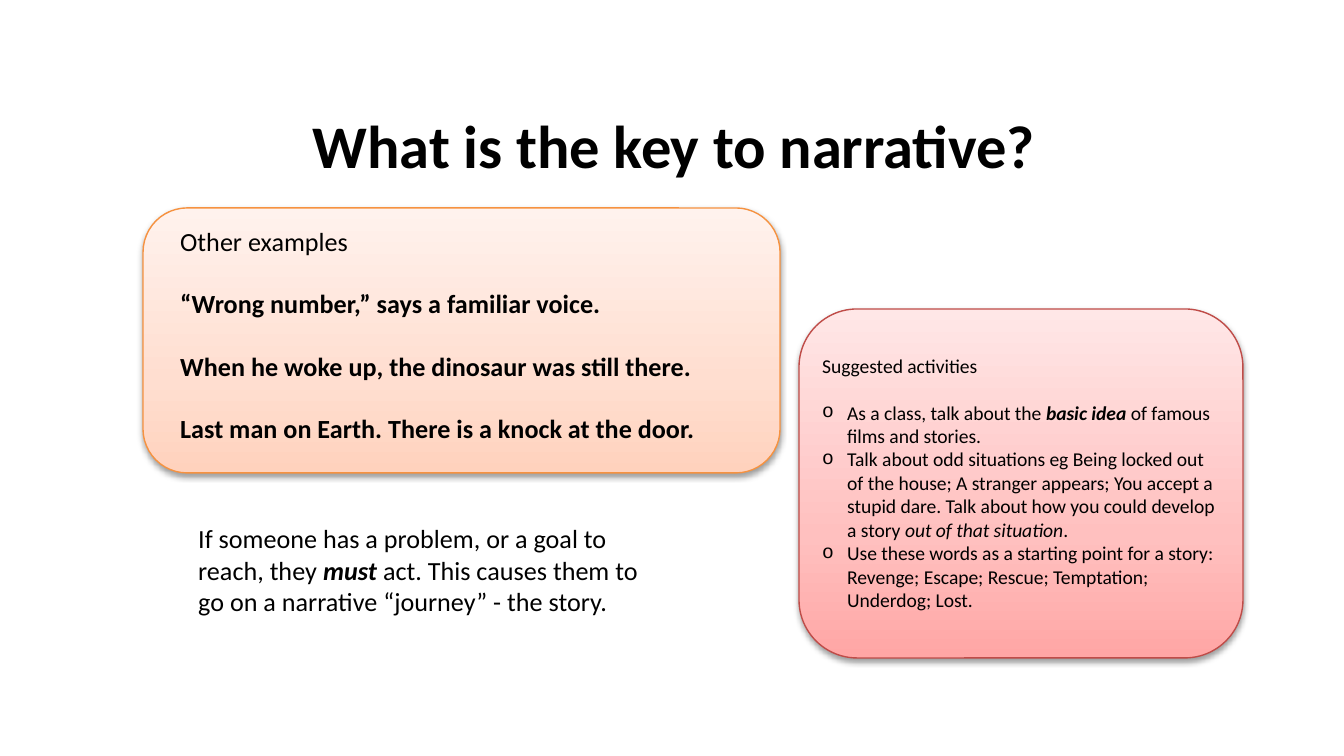
import copy

import lxml.etree
import pptx
import pptx.dml.color
import pptx.enum.shapes
import pptx.enum.text
import pptx.oxml.ns
import pptx.util

RGB = pptx.dml.color.RGBColor
BLACK = RGB(0, 0, 0)
ORANGE_LINE = RGB(0xF6, 0x92, 0x40)
ORANGE_STOPS = [RGB(0xFF, 0xD2, 0xBD), RGB(0xFF, 0xDE, 0xD0), RGB(0xFF, 0xF2, 0xED)]
RED_LINE = RGB(0xBF, 0x4C, 0x48)
RED_STOPS = [RGB(0xFF, 0xA6, 0xA5), RGB(0xFF, 0xC0, 0xBF), RGB(0xFF, 0xE7, 0xE7)]
STOP_POSITIONS = [0, 0.35, 1]

FONT = "Calibri"
BODY, SMALL = 14, 10.5
EMU_PER_PX = 914400 / 134.4
qn = pptx.oxml.ns.qn


def px(n):
    return pptx.util.Emu(round(n * EMU_PER_PX))


def add_child(parent, tag, **attrs):
    return lxml.etree.SubElement(parent, qn(tag), attrs)


def add_runs(p, parts, size):
    """Each part is (text, style); style holds b for bold, i for italic."""
    for text, style in parts:
        r = p.add_run()
        r.text = text
        r.font.name = FONT
        r.font.size = pptx.util.Pt(size)
        r.font.bold = "b" in style
        r.font.italic = "i" in style
        r.font.color.rgb = BLACK


def add_text(slide, box, paragraphs, size):
    """Add a wrapped text box and return its paragraphs."""
    tf = slide.shapes.add_textbox(*map(px, box)).text_frame
    tf.word_wrap = True
    for n, parts in enumerate(paragraphs):
        p = tf.paragraphs[0] if n == 0 else tf.add_paragraph()
        add_runs(p, parts, size)
    return tf.paragraphs


def add_bullet(p):
    pPr = p._p.get_or_add_pPr()
    pPr.set("marL", str(px(25)))
    pPr.set("indent", str(px(-25)))
    add_child(pPr, "a:buFont", typeface="Courier New")
    add_child(pPr, "a:buChar", char="o")


def add_panel(slide, box, stops, line):
    """Rounded panel with an upward gradient and a soft shadow below."""
    sp = slide.shapes.add_shape(
        pptx.enum.shapes.MSO_SHAPE.ROUNDED_RECTANGLE, *map(px, box))
    sp.fill.gradient()
    sp.fill.gradient_angle = 90
    gs_list = sp._element.spPr.find(qn("a:gradFill")).find(qn("a:gsLst"))
    gs_list.append(copy.deepcopy(gs_list[0]))
    for stop, position, color in zip(sp.fill.gradient_stops, STOP_POSITIONS, stops):
        stop.position = position
        stop.color.rgb = color
    sp.line.color.rgb = line
    sp.line.width = pptx.util.Pt(0.75)
    sp.shadow.inherit = False
    effects = sp._element.spPr.find(qn("a:effectLst"))
    shadow = add_child(effects, "a:outerShdw", blurRad="40000", dist="20000",
                       dir="5400000", rotWithShape="0")
    color = add_child(shadow, "a:srgbClr", val="000000")
    add_child(color, "a:alpha", val="38000")


def add_title(slide, box):
    title = slide.shapes.title
    title.left, title.top, title.width, title.height = map(px, box)
    tf = title.text_frame
    tf.vertical_anchor = pptx.enum.text.MSO_ANCHOR.TOP
    tf.margin_top = px(4)
    p = tf.paragraphs[0]
    p.alignment = pptx.enum.text.PP_ALIGN.CENTER
    add_runs(p, [("What is the key to narrative?", "b")], 32.4)


def add_examples(slide, box):
    x, y, w, h = box
    add_panel(slide, box, ORANGE_STOPS, ORANGE_LINE)
    paragraphs = add_text(slide, (x + 24, y + 11, w - 36, h - 11), [
        [("Other examples", "")],
        [("“Wrong number,” says a familiar voice.", "b")],
        [("When he woke up, the dinosaur was still there.", "b")],
        [("Last man on Earth. There is a knock at the door.", "b")],
    ], BODY)
    for p in paragraphs[1:]:
        p.space_before = pptx.util.Pt(16.5)


def add_explanation(slide, box):
    add_text(slide, box, [[
        ("If someone has a problem, or a goal to reach, they ", ""),
        ("must ", "bi"),
        ("act. This causes them to go on a narrative “journey” - the story.", ""),
    ]], BODY)


def add_activities(slide, box):
    x, y, w, h = box
    add_panel(slide, box, RED_STOPS, RED_LINE)
    paragraphs = add_text(slide, (x + 10, y + 38, w - 16, h - 76), [
        [("Suggested activities", "")],
        [("As a class, talk about the ", ""), ("basic idea ", "bi"),
         ("of famous films and stories.", "")],
        [("Talk about odd situations eg Being locked out of the house; "
          "A stranger appears; You accept a stupid dare. "
          "Talk about how you could develop a story ", ""),
         ("out of that situation", "i"), (".", "")],
        [("Use these words as a starting point for a story: "
          "Revenge; Escape; Rescue; Temptation; Underdog; Lost.", "")],
    ], SMALL)
    for p in paragraphs[1:]:
        add_bullet(p)
    paragraphs[1].space_before = pptx.util.Pt(12.5)


def main():
    prs = pptx.Presentation()
    prs.slide_width, prs.slide_height = px(1344), px(756)
    slide = prs.slides.add_slide(prs.slide_layouts[5])
    add_title(slide, (69, 104, 1210, 126))
    add_examples(slide, (143, 208, 637, 265))
    add_explanation(slide, (185, 516, 497, 109))
    add_activities(slide, (799, 309, 444, 349))
    prs.save("out.pptx")


if __name__ == "__main__":
    main()
